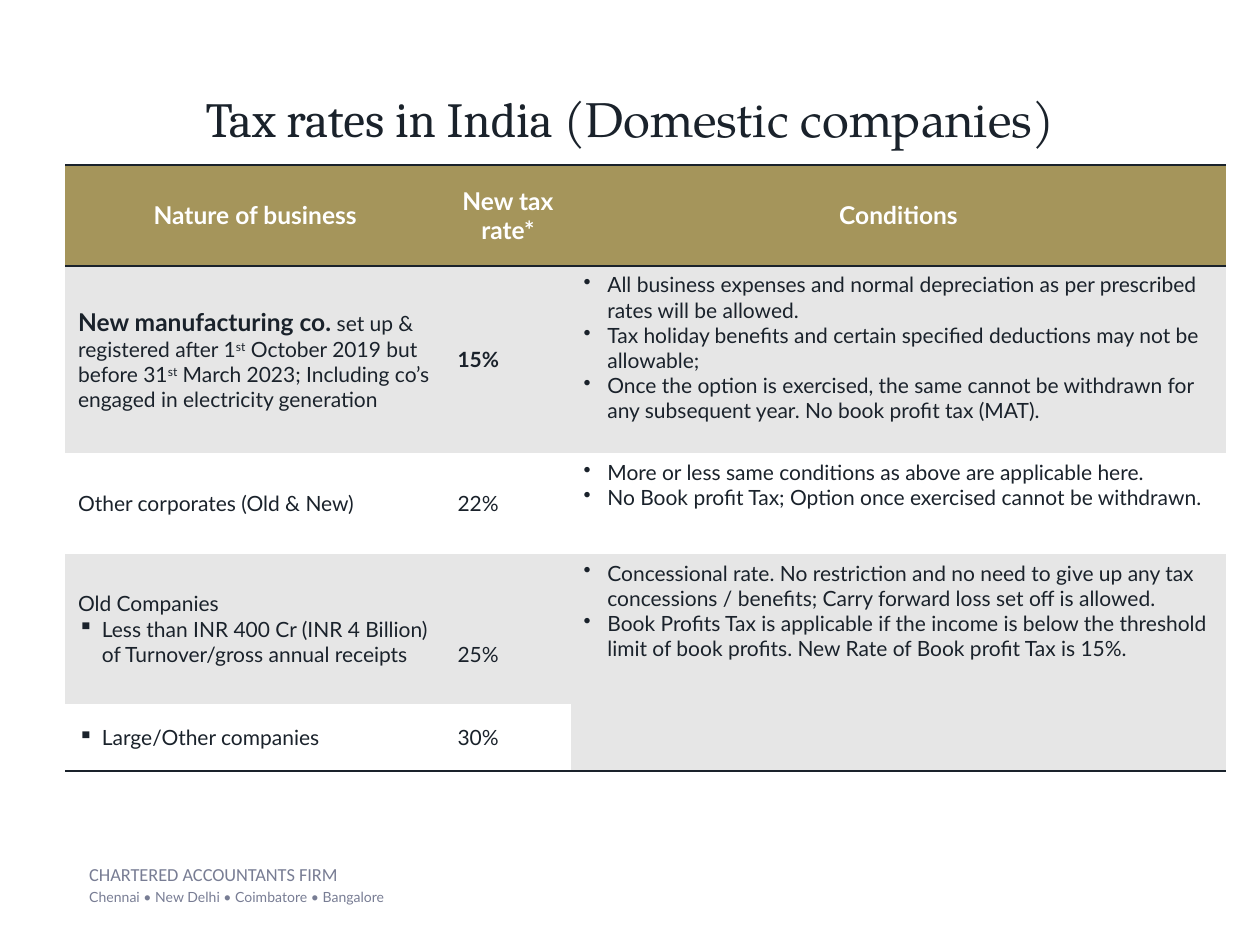
"""Build a slide with a table of Indian tax rates for domestic companies."""
import pptx
import pptx.dml.color
import pptx.enum.text
import pptx.oxml
import pptx.oxml.ns
import pptx.util

Cm = pptx.util.Cm
Pt = pptx.util.Pt
ALIGN = pptx.enum.text.PP_ALIGN
ANCHOR = pptx.enum.text.MSO_ANCHOR

INK, GOLD, GREY, SLATE, WHITE = "1A222B", "A5955B", "E6E6E6", "787D94", "FFFFFF"
NO_GRID_STYLE = "{2D5ABB26-0587-4C30-8999-92F81FD0307C}"
BODY = {"name": "Lato", "size": Pt(12), "bold": False, "color": INK}
HEAD = BODY | {"size": Pt(14), "bold": True, "color": WHITE}
LEAD = BODY | {"size": Pt(14), "bold": True}
STRONG = BODY | {"bold": True}
RAISED = BODY | {"baseline": 30000}
TITLE = {"name": "Cambria", "size": Pt(28), "bold": False, "color": INK}
FIRM = {"name": "Calibri", "size": Pt(10.5), "color": SLATE}
CITIES = {"name": "Lato", "size": Pt(8), "color": SLATE}

COLUMNS = [7.65, 2.54, 13.21]
ROWS = [2.03, 3.78, 2.03, 3.02, 1.35]
HEADINGS = ["Nature of business", "New tax rate*", "Conditions"]
BUSINESSES = [
    [("", [("New manufacturing co.", LEAD),
           (" set up & registered after 1", BODY), ("st", RAISED),
           (" October 2019 but before 31", BODY), ("st", RAISED),
           (" March 2023; Including co’s engaged in electricity generation", BODY)])],
    [("", [("Other corporates (Old & New)", BODY)])],
    [("", [("Old Companies", BODY)]),
     ("▪", [("Less than INR 400 Cr (INR 4 Billion) of Turnover/gross annual receipts", BODY)])],
    [("▪", [("Large/Other companies", BODY)])],
]
RATES = [("15%", STRONG), ("22%", BODY), ("25%", BODY), ("30%", BODY)]
CONDITIONS = [
    ["All business expenses and normal depreciation as per prescribed rates will be allowed.",
     "Tax holiday benefits and certain specified deductions may not be allowable;",
     "Once the option is exercised, the same cannot be withdrawn for any subsequent year. "
     "No book profit tax (MAT)."],
    ["More or less same conditions as above are applicable here.",
     "No Book profit Tax; Option once exercised cannot be withdrawn."],
    ["Concessional rate. No restriction and no need to give up any tax concessions / benefits; "
     "Carry forward loss set off is allowed.",
     "Book Profits Tax is applicable if the income is below the threshold limit of book profits. "
     "New Rate of Book profit Tax is 15%."],
]


def rgb(value):
    """Turn a hex string into a colour."""
    return pptx.dml.color.RGBColor.from_string(value)


def add_span(para, text, style):
    """Add a run and apply its format values."""
    span = para.add_run()
    span.text = text
    for key, value in style.items():
        if key == "color":
            span.font.color.rgb = rgb(value)
        elif key == "baseline":
            span.font._element.set("baseline", str(value))
        else:
            setattr(span.font, key, value)


def add_bullet(para, mark):
    """Give a paragraph a hanging bullet."""
    properties = para._p.get_or_add_pPr()
    properties.set("marL", str(Cm(0.48)))
    properties.set("indent", str(-Cm(0.48)))
    bullet = pptx.oxml.parse_xml(f'<a:buChar {pptx.oxml.ns.nsdecls("a")} char="{mark}"/>')
    properties.append(bullet)


def write(frame, paras, **settings):
    """Fill a text frame with (bullet, spans) paragraphs."""
    for index, (mark, spans) in enumerate(paras):
        para = frame.add_paragraph() if index else frame.paragraphs[0]
        if mark:
            add_bullet(para, mark)
        for key, value in settings.items():
            setattr(para, key, value)
        for text, style in spans:
            add_span(para, text, style)


def rule(cell, side):
    """Draw a one-point line on a side (T or B) of a cell."""
    line = pptx.oxml.parse_xml(
        f'<a:ln{side} {pptx.oxml.ns.nsdecls("a")} w="{Pt(1)}"><a:solidFill>'
        f'<a:srgbClr val="{INK}"/></a:solidFill></a:ln{side}>')
    cell._tc.get_or_add_tcPr().insert(0, line)


def paint(cell, color):
    """Fill a cell, or leave it clear when there is no colour."""
    if color:
        cell.fill.solid()
        cell.fill.fore_color.rgb = rgb(color)
    else:
        cell.fill.background()


def add_title(page):
    """Place the slide title."""
    box = page.shapes.title
    place = {"left": Cm(1.22), "top": Cm(1.85), "width": Cm(22.96), "height": Cm(1.27)}
    for key, value in place.items():
        setattr(box, key, value)
    frame = box.text_frame
    layout = {"auto_size": pptx.enum.text.MSO_AUTO_SIZE.NONE, "word_wrap": True,
              "vertical_anchor": ANCHOR.MIDDLE}
    layout |= {f"margin_{side}": Cm(0.13) for side in ("left", "right", "top", "bottom")}
    for key, value in layout.items():
        setattr(frame, key, value)
    spans = [("Tax rates in India ", TITLE),
             ("(Domestic companies)", TITLE | {"name": "TeX Gyre Pagella"})]
    write(frame, [("", spans)], alignment=ALIGN.CENTER, line_spacing=0.8)


def add_rates(page):
    """Add the table of businesses, rates and conditions."""
    holder = page.shapes.add_table(len(ROWS), len(COLUMNS), Cm(1.32), Cm(3.33),
                                   Cm(sum(COLUMNS)), Cm(sum(ROWS)))
    table = holder.table
    table._tbl.tblPr[0].text = NO_GRID_STYLE
    table.horz_banding = False
    for column, width in zip(table.columns, COLUMNS):
        column.width = Cm(width)
    for row, height in zip(table.rows, ROWS):
        row.height = Cm(height)

    last = len(ROWS) - 1
    for index, row in enumerate(table.rows):
        for cell in row.cells:
            cell.vertical_anchor = ANCHOR.MIDDLE
            if index in (0, last):
                rule(cell, "B")
            if index == 0:
                rule(cell, "T")
            paint(cell, GOLD if index == 0 else GREY if index % 2 else None)

    for cell, heading in zip(table.rows[0].cells, HEADINGS):
        write(cell.text_frame, [("", [(heading, HEAD)])], alignment=ALIGN.CENTER)
    for index, (business, rate) in enumerate(zip(BUSINESSES, RATES), 1):
        write(table.cell(index, 0).text_frame, business)
        write(table.cell(index, 1).text_frame, [("", [rate])])
    for index, items in enumerate(CONDITIONS, 1):
        cell = table.cell(index, 2)
        cell.vertical_anchor = ANCHOR.TOP
        write(cell.text_frame, [("•", [(item, BODY)]) for item in items])

    old_rate = table.cell(3, 1)
    old_rate.vertical_anchor = ANCHOR.BOTTOM
    old_rate.margin_bottom = Cm(0.75)
    shared = table.cell(3, 2)
    rule(shared, "B")
    shared.merge(table.cell(last, 2))


def add_footer(page):
    """Add the firm name and its cities."""
    box = page.shapes.add_textbox(Cm(1.55), Cm(17.27), Cm(12.12), Cm(1.12))
    frame = box.text_frame
    frame.word_wrap = True
    write(frame, [("", [("CHARTERED ACCOUNTANTS FIRM", FIRM)]),
                  ("", [("Chennai • New Delhi • Coimbatore • Bangalore", CITIES)])])
    frame.paragraphs[1].space_before = Pt(2.1)


def main():
    """Build and save the deck."""
    deck = pptx.Presentation()
    deck.slide_width, deck.slide_height = Cm(25.4), Cm(19.05)
    page = deck.slides.add_slide(deck.slide_layouts[5])
    add_footer(page)
    add_rates(page)
    add_title(page)
    deck.save("out.pptx")


if __name__ == "__main__":
    main()
